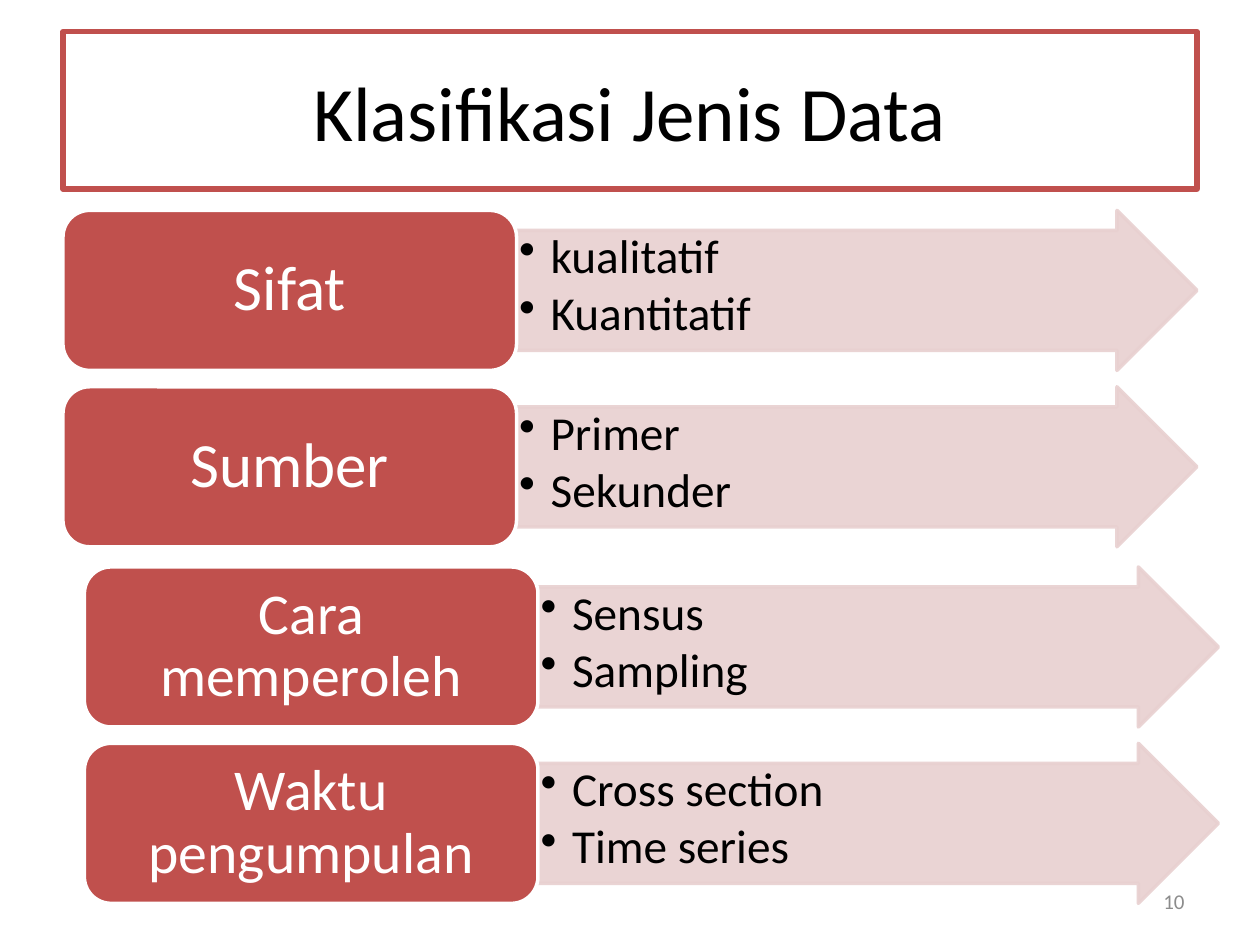
import pptx
import pptx.util
import pptx.dml.color
import pptx.enum.shapes
import pptx.enum.text
import pptx.oxml
import pptx.oxml.ns

Inches = pptx.util.Inches
Pt = pptx.util.Pt
SHAPE = pptx.enum.shapes.MSO_SHAPE
ALIGN = pptx.enum.text.PP_ALIGN
ANCHOR = pptx.enum.text.MSO_ANCHOR
qn = pptx.oxml.ns.qn

RED, PINK, WHITE, BLACK, GREY = "C0504D", "E8D0D0", "FFFFFF", "000000", "8C8C8C"
LABEL_WIDTH, ARROW_WIDTH, ROW_HEIGHT = 3.6, 5.4, 1.27
ROW_PITCH = 1.4
GROUPS = [
    (0.5, 1.67, 36, 0.15, [("Sifat", ["kualitatif", "Kuantitatif"]),
                           ("Sumber", ["Primer", "Sekunder"])]),
    (0.67, 4.5, 33, 0.14, [("Cara memperoleh", ["Sensus", "Sampling"]),
                           ("Waktu pengumpulan", ["Cross section", "Time series"])]),
]


def rgb(value):
    return pptx.dml.color.RGBColor.from_string(value)


def apply_format(target, values):
    for name, value in values.items():
        setattr(target, name, value)


def format_font(font, size, color):
    apply_format(font, {"name": "Calibri", "size": Pt(size)})
    font.color.rgb = rgb(color)


def set_frame(frame, anchor, side, edge):
    apply_format(frame, {
        "word_wrap": True, "vertical_anchor": anchor,
        "margin_left": Inches(side), "margin_right": Inches(side),
        "margin_top": Inches(edge), "margin_bottom": Inches(edge),
    })


def add_box(slide, preset, left, top, width, fill, line):
    box = slide.shapes.add_shape(
        preset, Inches(left), Inches(top), Inches(width), Inches(ROW_HEIGHT))
    box.shadow.inherit = False
    box.fill.solid()
    box.fill.fore_color.rgb = rgb(fill)
    box.line.color.rgb = rgb(line)
    box.line.width = Pt(2)
    return box


def make_translucent(box, percent):
    for color in box._element.spPr.iter(qn("a:srgbClr")):
        alpha = pptx.oxml.parse_xml(
            f'<a:alpha {pptx.oxml.ns.nsdecls("a")} val="{percent * 1000}"/>')
        color.append(alpha)


def add_bullet(paragraph):
    properties = paragraph._p.get_or_add_pPr()
    properties.set("marL", str(Inches(0.25)))
    properties.set("indent", str(Inches(-0.25)))
    properties.append(pptx.oxml.parse_xml(
        f'<a:buChar {pptx.oxml.ns.nsdecls("a")} char="•"/>'))


def add_arrow(slide, left, top, items):
    arrow = add_box(slide, SHAPE.RIGHT_ARROW, left, top, ARROW_WIDTH, PINK, PINK)
    arrow.adjustments[0] = 0.75
    arrow.adjustments[1] = 0.5
    make_translucent(arrow, 90)
    frame = arrow.text_frame
    set_frame(frame, ANCHOR.TOP, 0.02, 0.02)
    for index, item in enumerate(items):
        paragraph = frame.add_paragraph() if index else frame.paragraphs[0]
        add_bullet(paragraph)
        paragraph.text = item
        apply_format(paragraph, {
            "alignment": ALIGN.LEFT, "line_spacing": 0.9, "space_after": Pt(3.5)})
        format_font(paragraph.font, 27, BLACK)


def add_label(slide, left, top, text, size, side):
    label = add_box(slide, SHAPE.ROUNDED_RECTANGLE, left, top, LABEL_WIDTH, RED, WHITE)
    set_frame(label.text_frame, ANCHOR.MIDDLE, side, 0.07)
    paragraph = label.text_frame.paragraphs[0]
    paragraph.text = text
    apply_format(paragraph, {"alignment": ALIGN.CENTER, "line_spacing": 0.9})
    format_font(paragraph.font, size, WHITE)


def add_title(slide, text):
    title = slide.shapes.title
    apply_format(title, {"left": Inches(0.5), "top": Inches(0.25),
                         "width": Inches(9), "height": Inches(1.25)})
    title.line.color.rgb = rgb(RED)
    title.line.width = Pt(3)
    title.text_frame.vertical_anchor = ANCHOR.MIDDLE
    paragraph = title.text_frame.paragraphs[0]
    paragraph.text = text
    paragraph.alignment = ALIGN.CENTER
    format_font(paragraph.font, 44, BLACK)


def add_page_number(slide, number):
    page = slide.shapes.add_textbox(Inches(7.17), Inches(6.95), Inches(2.33), Inches(0.4))
    set_frame(page.text_frame, ANCHOR.MIDDLE, 0.1, 0.05)
    paragraph = page.text_frame.paragraphs[0]
    paragraph.text = number
    paragraph.alignment = ALIGN.RIGHT
    format_font(paragraph.font, 12, GREY)


def main():
    deck = pptx.Presentation()
    apply_format(deck, {"slide_width": Inches(10), "slide_height": Inches(7.5)})
    slide = deck.slides.add_slide(deck.slide_layouts[5])
    add_page_number(slide, "10")
    add_title(slide, "Klasifikasi Jenis Data")
    for left, first_top, size, side, rows in GROUPS:
        for index, (label, items) in enumerate(rows):
            top = first_top + index * ROW_PITCH
            add_arrow(slide, left + LABEL_WIDTH, top, items)
            add_label(slide, left, top, label, size, side)
    deck.save("out.pptx")


if __name__ == "__main__":
    main()
